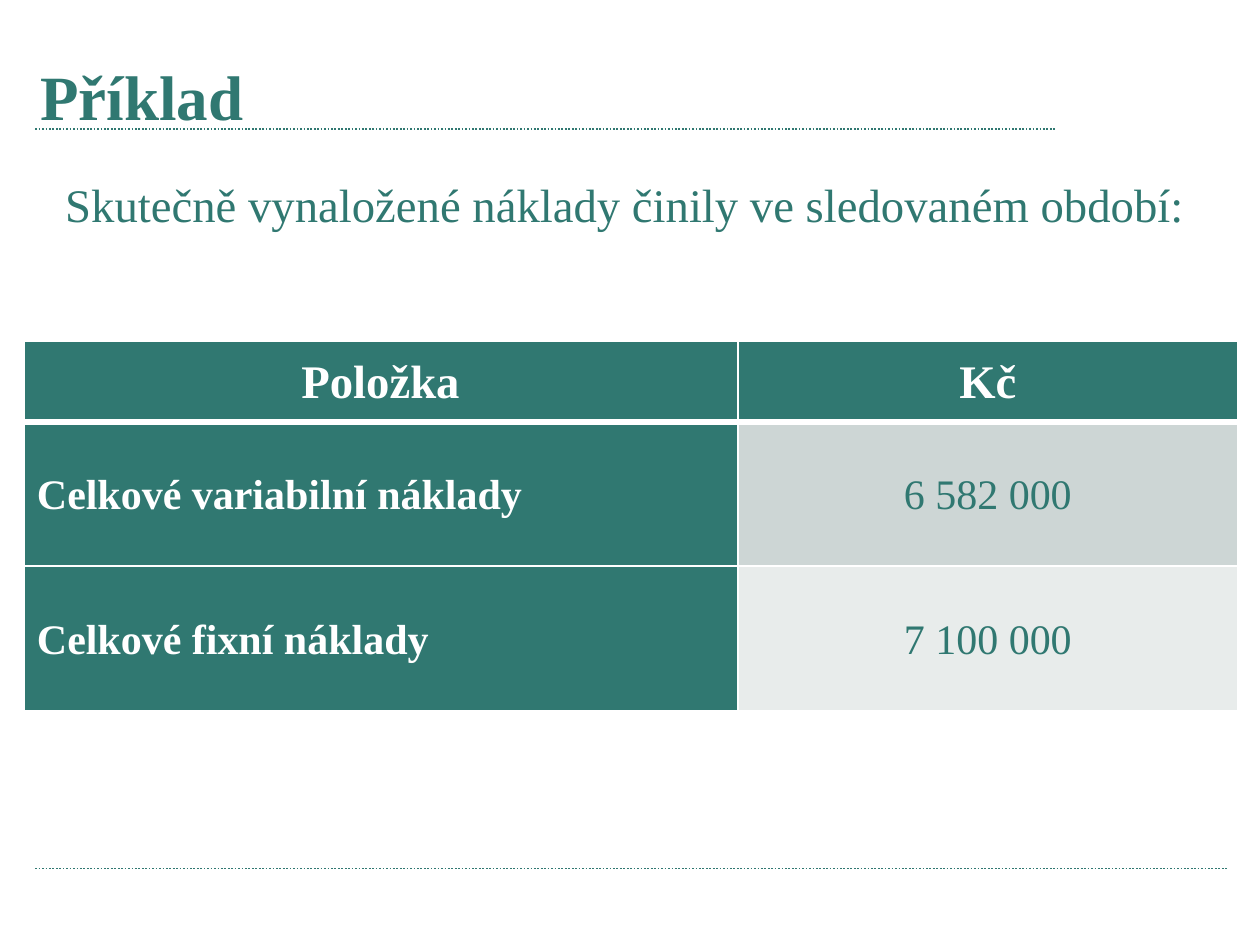
from dataclasses import dataclass

from lxml import etree
from pptx import Presentation
from pptx.dml.color import RGBColor
from pptx.enum.dml import MSO_LINE
from pptx.enum.shapes import MSO_CONNECTOR
from pptx.enum.text import MSO_ANCHOR, PP_ALIGN
from pptx.oxml.ns import qn
from pptx.util import Inches, Pt

STRAIGHT = MSO_CONNECTOR.STRAIGHT
DOTTED = MSO_LINE.ROUND_DOT
MIDDLE = MSO_ANCHOR.MIDDLE
LEFT, CENTER = PP_ALIGN.LEFT, PP_ALIGN.CENTER
TITLE_ONLY = 5


@dataclass(frozen=True)
class Theme:
    font: str = "Times New Roman"
    teal: str = "307871"
    white: str = "FFFFFF"
    bands: tuple = ("CDD6D5", "E8ECEB")
    title_size: float = 27
    lead_size: float = 20
    cell_size: float = 18
    rule_width: float = 0.75
    border_width: float = 1
    header_border_width: float = 3


THEME = Theme()
COST_ROWS = [
    ("Položka", "Kč"),
    ("Celkové variabilní náklady", "6 582 000"),
    ("Celkové fixní náklady", "7 100 000"),
]
COLUMN_WIDTHS = (4.25, 2.98)
ROW_HEIGHTS = (0.48, 0.86, 0.86)


def write(text_frame, text, size, color, bold=False, align=LEFT):
    text_frame.text = text
    paragraph = text_frame.paragraphs[0]
    paragraph.alignment = align
    font = paragraph.runs[0].font
    font.name, font.size, font.bold = THEME.font, Pt(size), bold
    font.color.rgb = RGBColor.from_string(color)
    return paragraph


def add_rule(slide, right, y):
    rule = slide.shapes.add_connector(
        STRAIGHT, Inches(0.21), Inches(y), Inches(right), Inches(y))
    rule.line.color.rgb = RGBColor.from_string(THEME.teal)
    rule.line.width = Pt(THEME.rule_width)
    rule.line.dash_style = DOTTED
    etree.SubElement(rule._element.spPr, qn("a:effectLst"))


def add_title(slide, text):
    title = slide.shapes.title
    title.left, title.top = Inches(0.14), Inches(0.29)
    title.width, title.height = Inches(6.61), Inches(0.59)
    title.text_frame.vertical_anchor = MIDDLE
    title.text_frame.margin_bottom = Inches(0.09)
    write(title.text_frame, text, THEME.title_size, THEME.teal, bold=True)


def add_lead(slide, text):
    lead = slide.shapes.add_textbox(
        Inches(0.29), Inches(1), Inches(7.17), Inches(0.84))
    lead.text_frame.word_wrap = True
    write(lead.text_frame, text, THEME.lead_size, THEME.teal)


def set_borders(cell, top, bottom):
    """Draw white borders, with the top and bottom widths in points."""
    properties = cell._tc.get_or_add_tcPr()
    side = THEME.border_width
    for tag, width in (("lnL", side), ("lnR", side), ("lnT", top), ("lnB", bottom)):
        border = etree.SubElement(properties, qn(f"a:{tag}"), w=str(Pt(width)))
        fill = etree.SubElement(border, qn("a:solidFill"))
        etree.SubElement(fill, qn("a:srgbClr"), val=THEME.white)


def fill_cell(cell, text, row, column):
    is_header, is_label = row == 0, column == 0
    is_dark = is_header or is_label
    thin, thick = THEME.border_width, THEME.header_border_width
    set_borders(cell, thick if row == 1 else thin, thick if is_header else thin)
    cell.fill.solid()
    cell.fill.fore_color.rgb = RGBColor.from_string(
        THEME.teal if is_dark else THEME.bands[row - 1])
    cell.vertical_anchor = MIDDLE
    cell.margin_left = cell.margin_right = Inches(0.08)
    cell.margin_top = cell.margin_bottom = 0
    paragraph = write(
        cell.text_frame, text,
        THEME.lead_size if is_header else THEME.cell_size,
        THEME.white if is_dark else THEME.teal,
        bold=is_dark,
        align=LEFT if is_label and not is_header else CENTER)
    paragraph.line_spacing = 1.07


def add_cost_table(slide):
    table = slide.shapes.add_table(
        len(ROW_HEIGHTS), len(COLUMN_WIDTHS), Inches(0.14), Inches(2.03),
        Inches(sum(COLUMN_WIDTHS)), Inches(sum(ROW_HEIGHTS))).table
    for column, width in zip(table.columns, COLUMN_WIDTHS):
        column.width = Inches(width)
    for row, height in zip(table.rows, ROW_HEIGHTS):
        row.height = Inches(height)
    for row, texts in enumerate(COST_ROWS):
        for column, text in enumerate(texts):
            fill_cell(table.cell(row, column), text, row, column)


def main():
    presentation = Presentation()
    presentation.slide_width = Inches(7.5)
    presentation.slide_height = presentation.slide_width * 3 // 4
    slide = presentation.slides.add_slide(presentation.slide_layouts[TITLE_ONLY])
    add_rule(slide, right=6.29, y=0.77)
    add_rule(slide, right=7.31, y=5.17)
    add_title(slide, "Příklad")
    add_lead(slide, "Skutečně vynaložené náklady činily ve sledovaném období:")
    add_cost_table(slide)
    presentation.save("out.pptx")


if __name__ == "__main__":
    main()
